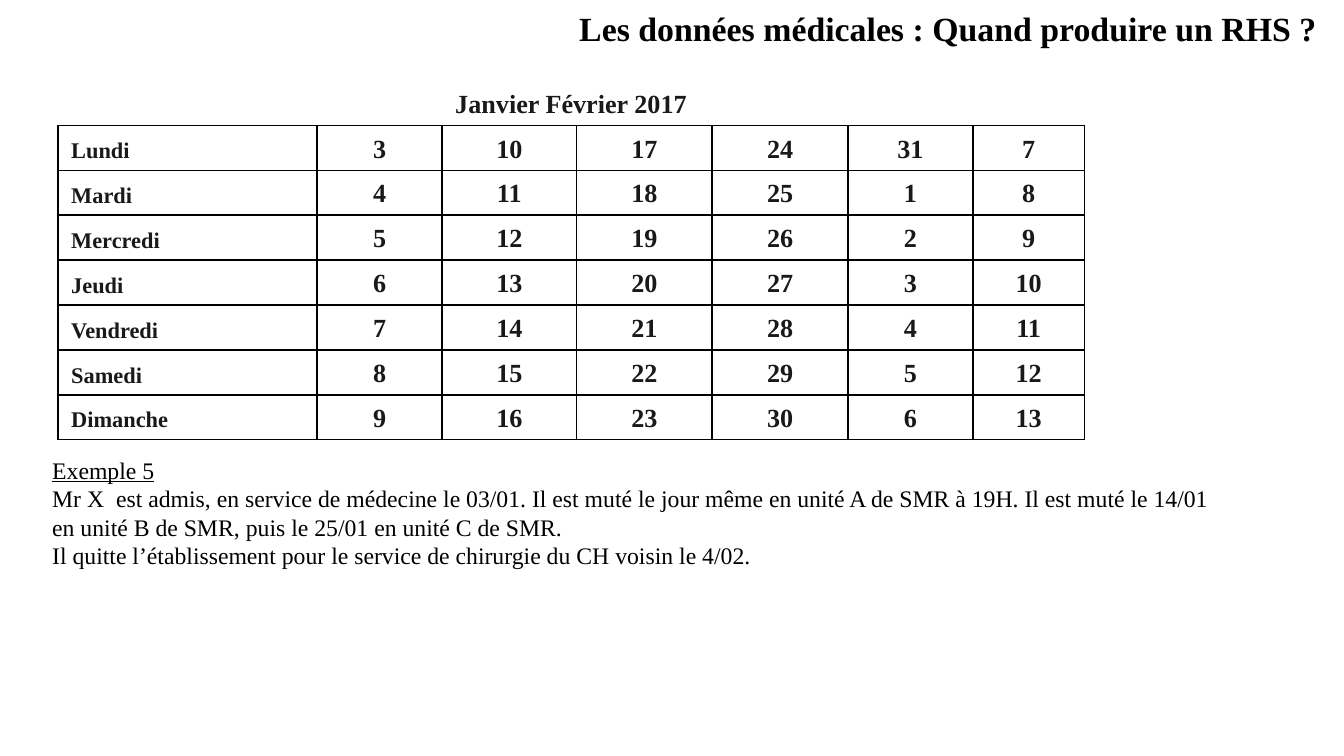
from pptx import Presentation
from pptx.dml.color import RGBColor
from pptx.enum.text import MSO_ANCHOR, MSO_AUTO_SIZE, PP_ALIGN
from pptx.oxml import parse_xml
from pptx.oxml.ns import nsdecls
from pptx.util import Inches, Pt

FONT = "Times New Roman"
BLACK, GREY = "000000", "191919"
DAYS = ["Lundi", "Mardi", "Mercredi", "Jeudi", "Vendredi", "Samedi", "Dimanche"]
COLS = [1.93, 0.93, 1, 1.01, 1.01, 0.93, 0.83]
CASE = [
    "Exemple 5",
    "Mr X  est admis, en service de médecine le 03/01. Il est muté le jour même "
    "en unité A de SMR à 19H. Il est muté le 14/01 en unité B de SMR, "
    "puis le 25/01 en unité C de SMR.",
    "Il quitte l’établissement pour le service de chirurgie du CH voisin le 4/02.",
]


def paint(color, value):
    color.rgb = RGBColor.from_string(value)


def style(para, size, color, bold=False, align=PP_ALIGN.LEFT):
    para.alignment = align
    for run in para.runs:
        run.font.name = FONT
        run.font.size = Pt(size)
        run.font.bold = bold
        paint(run.font.color, color)


def border(cell, sides):
    props = cell._tc.get_or_add_tcPr()
    for spot, side in enumerate(sides):
        line = parse_xml(
            f'<a:ln{side} {nsdecls("a")} w="{Pt(1)}"><a:solidFill>'
            f'<a:srgbClr val="{BLACK}"/></a:solidFill></a:ln{side}>')
        props.insert(spot, line)


def fill_cell(cell, text, size, align, sides):
    cell.text_frame.text = text
    cell.vertical_anchor = MSO_ANCHOR.BOTTOM
    para = cell.text_frame.paragraphs[0]
    style(para, size, GREY, True, align)
    # Hanging indent, and a paragraph end no taller than the text
    props = para._p.get_or_add_pPr()
    props.set("marL", str(Inches(0.38)))
    props.set("indent", str(-Inches(0.38)))
    para._p.append(parse_xml(
        f'<a:endParaRPr {nsdecls("a")} sz="{size * 100}" b="1">'
        f'<a:latin typeface="{FONT}"/></a:endParaRPr>'))
    cell.fill.background()
    border(cell, sides)


def add_title(slide, left, top, width, height):
    title = slide.shapes.title
    title.left, title.top = Inches(left), Inches(top)
    title.width, title.height = Inches(width), Inches(height)
    frame = title.text_frame
    frame.text = "Les données médicales : Quand produire un RHS ?"
    frame.word_wrap = False
    frame.auto_size = MSO_AUTO_SIZE.SHAPE_TO_FIT_TEXT
    frame.vertical_anchor = MSO_ANCHOR.TOP
    style(frame.paragraphs[0], 18.1, BLACK, True)


def add_month(slide, left, top, width, height):
    count = len(DAYS) + 1
    table = slide.shapes.add_table(
        count, len(COLS), Inches(left), Inches(top),
        Inches(width), Inches(height)).table
    table.first_row = table.horz_banding = False
    for col, size in zip(table.columns, COLS):
        col.width = Inches(size * width / sum(COLS))
    for row in table.rows:
        row.height = Inches(height / count)

    # Heading across all weeks, with only its bottom edge ruled
    for col in range(len(COLS)):
        text = "" if col else "Janvier Février 2017"
        fill_cell(table.cell(0, col), text, 14, PP_ALIGN.CENTER, "B")
    table.cell(0, 0).merge(table.cell(0, len(COLS) - 1))

    # One row per weekday, one column per week starting on the 3rd
    for row, day in enumerate(DAYS):
        fill_cell(table.cell(row + 1, 0), day, 12, PP_ALIGN.LEFT, "LRTB")
        for week in range(len(COLS) - 1):
            date = (2 + row + 7 * week) % 31 + 1
            fill_cell(table.cell(row + 1, week + 1), str(date), 14,
                      PP_ALIGN.CENTER, "LRTB")


def add_case(slide, left, top, width, height):
    box = slide.shapes.add_textbox(
        Inches(left), Inches(top), Inches(width), Inches(height))
    frame = box.text_frame
    frame.word_wrap = True
    frame.auto_size = MSO_AUTO_SIZE.SHAPE_TO_FIT_TEXT
    frame.text = "\n".join(CASE)
    for para in frame.paragraphs:
        style(para, 12.7, BLACK)
    frame.paragraphs[0].runs[0].font.underline = True


def main():
    deck = Presentation()
    # Widescreen, 16 to 9
    deck.slide_width = Inches(10)
    deck.slide_height = deck.slide_width * 9 // 16
    slide = deck.slides.add_slide(deck.slide_layouts[5])
    add_title(slide, 4.21, 0.01, 5.75, 0.41)
    add_month(slide, 0.43, 0.6, 7.64, 2.59)
    add_case(slide, 0.29, 3.34, 8.86, 0.96)
    deck.save("out.pptx")


if __name__ == "__main__":
    main()
